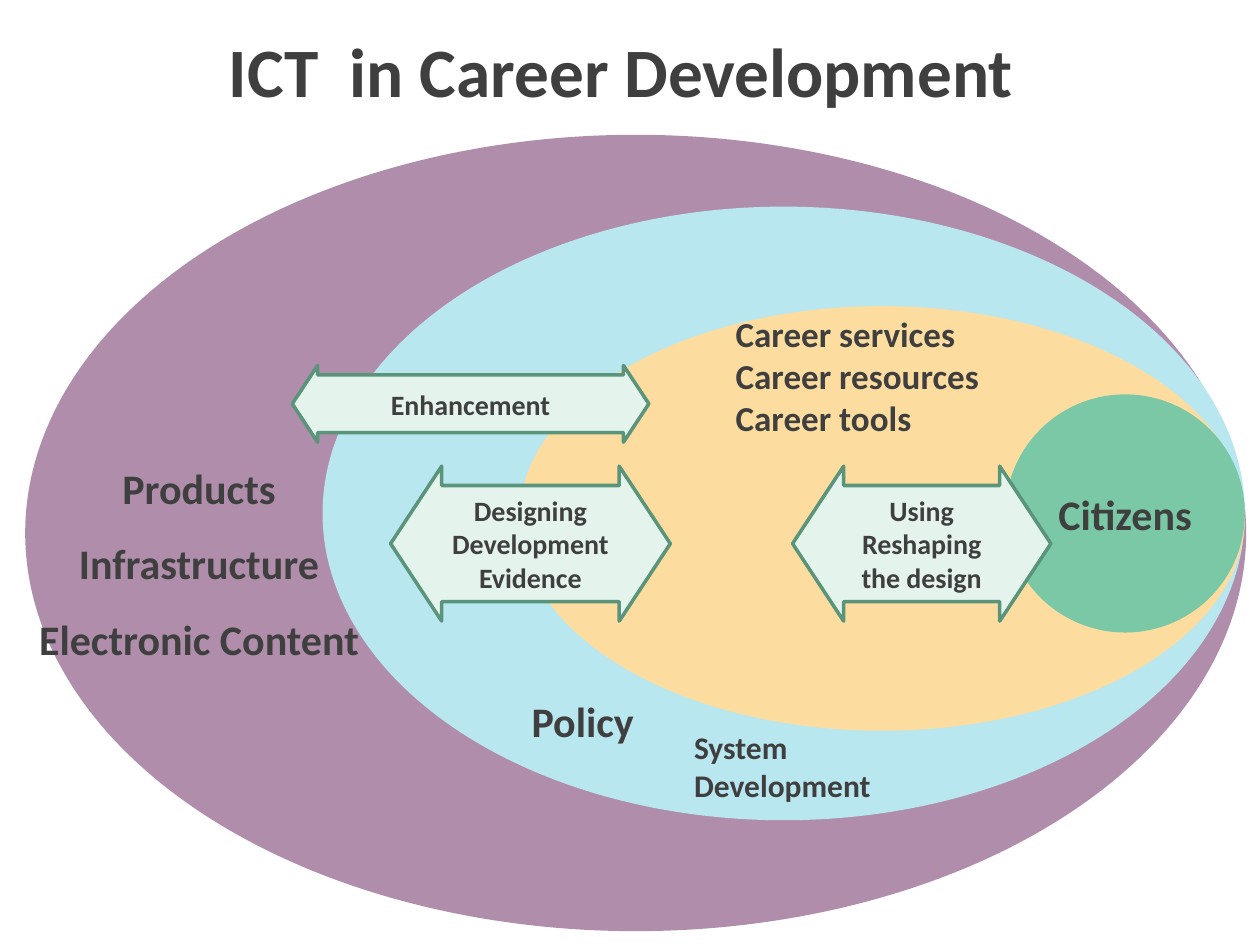
from lxml.etree import SubElement
from pptx import Presentation
from pptx.dml.color import RGBColor
from pptx.enum.shapes import MSO_SHAPE
from pptx.enum.text import MSO_ANCHOR, PP_ALIGN
from pptx.oxml.ns import qn
from pptx.util import Inches, Pt

PURPLE = RGBColor(0x94, 0x65, 0x8D)
SKY = RGBColor(0xB8, 0xE7, 0xF0)
SAND = RGBColor(0xFD, 0xDD, 0x9F)
GREEN = RGBColor(0x7A, 0xC8, 0xA5)
MINT = RGBColor(0xE4, 0xF4, 0xED)
DARK_GREEN = RGBColor(0x5A, 0x94, 0x7A)
CHARCOAL = RGBColor(0x3F, 0x3F, 0x3F)
FONT = "Calibri"


def write_lines(shape, lines, size, align, anchor, spacing=None, wrap=True):
    frame = shape.text_frame
    frame.word_wrap = wrap
    frame.vertical_anchor = anchor
    frame.text = "\n".join(lines)
    for para in frame.paragraphs:
        para.alignment = align
        para.line_spacing = spacing
        para.font.name = FONT
        para.font.size = Pt(size)
        para.font.bold = True
        para.font.color.rgb = CHARCOAL


def add_label(page, box, lines, size, align=PP_ALIGN.LEFT,
              anchor=MSO_ANCHOR.TOP, spacing=None, wrap=True):
    label = page.shapes.add_textbox(*map(Inches, box))
    write_lines(label, lines, size, align, anchor, spacing, wrap)


def add_ring(page, box, color, opacity=None):
    ring = page.shapes.add_shape(MSO_SHAPE.OVAL, *map(Inches, box))
    ring.shadow.inherit = False
    ring.fill.solid()
    ring.fill.fore_color.rgb = color
    ring.line.fill.background()
    if opacity is not None:
        tint = ring.fill._xPr.find(qn("a:solidFill"))[0]
        SubElement(tint, qn("a:alpha"), val=str(opacity * 1000))
    return ring


def add_citizens(page, box):
    circle = add_ring(page, box, GREEN)
    write_lines(circle, ["Citizens"], 24, PP_ALIGN.CENTER, MSO_ANCHOR.MIDDLE)


def add_exchange_arrow(page, box, lines):
    arrow = page.shapes.add_shape(MSO_SHAPE.LEFT_RIGHT_ARROW, *map(Inches, box))
    arrow.shadow.inherit = False
    arrow.adjustments[0] = 0.75
    arrow.adjustments[1] = 0.33
    arrow.fill.solid()
    arrow.fill.fore_color.rgb = MINT
    arrow.line.color.rgb = DARK_GREEN
    arrow.line.width = Pt(2)
    write_lines(arrow, lines, 16, PP_ALIGN.CENTER, MSO_ANCHOR.MIDDLE)


def main():
    deck = Presentation()
    deck.slide_width = Inches(10)
    deck.slide_height = Inches(7.5)
    page = deck.slides.add_slide(deck.slide_layouts[6])

    add_ring(page, (0.2, 1.07, 9.69, 6.32), PURPLE, opacity=73)
    add_ring(page, (2.56, 1.64, 7.32, 4.87), SKY)
    add_ring(page, (4.12, 2.43, 5.76, 3.37), SAND)
    add_label(page, (0.43, 0.21, 9, 0.69), ["ICT  in Career Development"], 39.6,
              PP_ALIGN.CENTER, MSO_ANCHOR.MIDDLE)
    add_citizens(page, (7.98, 3.13, 1.9, 1.89))
    add_label(page, (4.12, 5.47, 1.02, 0.5), ["Policy"], 24, wrap=False)
    add_label(page, (5.41, 5.73, 1.61, 0.71), ["System", "Development"], 18, wrap=False)
    add_exchange_arrow(page, (3.1, 3.7, 2.22, 1.23),
                       ["Designing", "Development", "Evidence"])
    add_exchange_arrow(page, (6.29, 3.7, 2.05, 1.23),
                       ["Using", "Reshaping", "the design"])
    add_label(page, (5.74, 2.43, 2.85, 1.11),
              ["Career services", "Career resources", "Career tools"], 20)
    add_label(page, (0.2, 3.42, 2.76, 2.39),
              ["Products", "Infrastructure", "Electronic Content"], 24,
              PP_ALIGN.CENTER, spacing=1.5)
    add_exchange_arrow(page, (2.32, 2.9, 2.83, 0.61), ["Enhancement"])

    deck.save("out.pptx")


if __name__ == "__main__":
    main()
